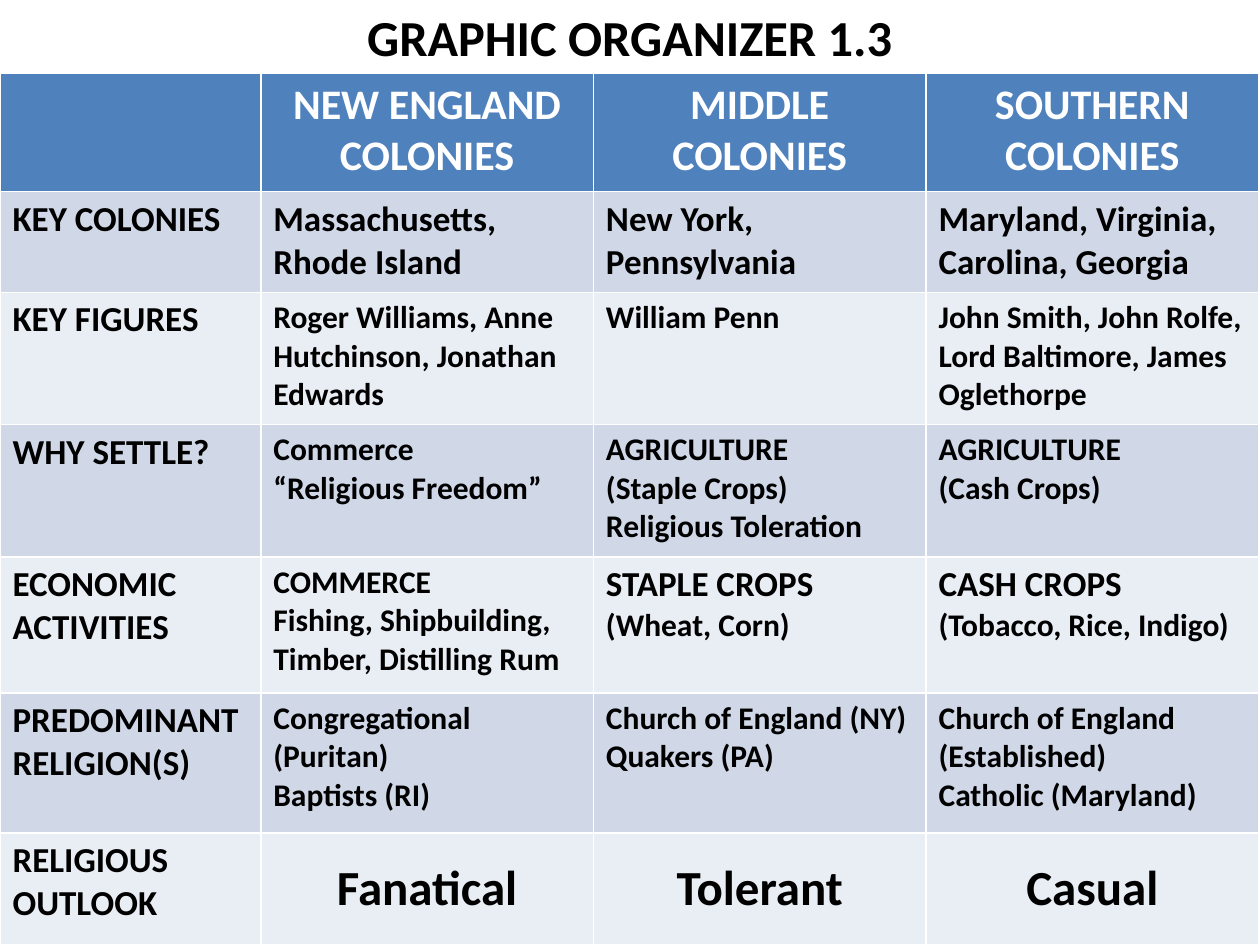
from pptx import Presentation
from pptx.dml.color import RGBColor
from pptx.enum.text import MSO_ANCHOR as Anchor, PP_ALIGN as Align
from pptx.util import Inches, Pt

FONT = "Calibri"
COLORS = {"header": "4F81BD", "odd": "D0D8E8", "even": "E9EDF4", "light": "FFFFFF", "dark": "000000"}
TITLE = "GRAPHIC ORGANIZER 1.3"
COLUMN_WIDTHS = [2.07, 2.64, 2.64, 2.64]
LABEL_SIZE = 20
LARGE_LINES = {"STAPLE CROPS", "CASH CROPS"}
ROWS = [
    (0.94, 24, ["", "NEW ENGLAND COLONIES", "MIDDLE COLONIES", "SOUTHERN COLONIES"]),
    (0.80, 20, ["KEY COLONIES", "Massachusetts, Rhode Island", "New York, Pennsylvania",
                "Maryland, Virginia, Carolina, Georgia"]),
    (1.05, 18, ["KEY FIGURES", "Roger Williams, Anne Hutchinson, Jonathan Edwards", "William Penn",
                "John Smith, John Rolfe, Lord Baltimore, James Oglethorpe"]),
    (1.05, 18, ["WHY SETTLE?", "Commerce\n“Religious Freedom”",
                "AGRICULTURE\n(Staple Crops)\nReligious Toleration", "AGRICULTURE\n(Cash Crops)"]),
    (1.08, 18, ["ECONOMIC ACTIVITIES", "COMMERCE\nFishing, Shipbuilding, Timber, Distilling Rum",
                "STAPLE CROPS\n(Wheat, Corn)", "CASH CROPS\n(Tobacco, Rice, Indigo)"]),
    (1.11, 18, ["PREDOMINANT RELIGION(S)", "Congregational (Puritan)\nBaptists (RI)",
                "Church of England (NY)\nQuakers (PA)",
                "Church of England (Established)\nCatholic (Maryland)"]),
    (0.89, 28, ["RELIGIOUS OUTLOOK", "Fanatical", "Tolerant", "Casual"]),
]


def style_para(para, size, color, align):
    para.alignment = align
    for span in para.runs:
        span.font.name = FONT
        span.font.size = Pt(size)
        span.font.bold = True
        span.font.color.rgb = RGBColor.from_string(COLORS[color])


def add_title(page):
    title = page.shapes.title
    title.left, title.top, title.width, title.height = Inches(0.5), Inches(0), Inches(9), Inches(0.58)
    title.text_frame.text = TITLE
    title.text_frame.vertical_anchor = Anchor.MIDDLE
    style_para(title.text_frame.paragraphs[0], 28.8, "dark", Align.CENTER)


def fill_cell(cell, text, size, row, column):
    is_header, is_label = row == 0, column == 0
    is_outlook = row == len(ROWS) - 1 and not is_label
    band = "header" if is_header else "odd" if row % 2 else "even"
    cell.fill.solid()
    cell.fill.fore_color.rgb = RGBColor.from_string(COLORS[band])
    cell.vertical_anchor = Anchor.MIDDLE if is_outlook else Anchor.TOP
    cell.text_frame.text = text
    for para in cell.text_frame.paragraphs:
        large = is_label or para.text in LARGE_LINES
        style_para(para, LABEL_SIZE if large else size, "light" if is_header else "dark",
                   Align.CENTER if is_header or is_outlook else Align.LEFT)


def add_organizer(page):
    height = sum(row[0] for row in ROWS)
    table = page.shapes.add_table(len(ROWS), len(COLUMN_WIDTHS), Inches(0), Inches(0.58),
                                  Inches(10), Inches(height)).table
    for column, width in zip(table.columns, COLUMN_WIDTHS):
        column.width = Inches(width)
    for r, (row_height, size, texts) in enumerate(ROWS):
        table.rows[r].height = Inches(row_height)
        for c, text in enumerate(texts):
            fill_cell(table.cell(r, c), text, size, r, c)


def main():
    deck = Presentation()
    deck.slide_width, deck.slide_height = Inches(10), Inches(7.5)
    page = deck.slides.add_slide(deck.slide_layouts[5])
    add_title(page)
    add_organizer(page)
    deck.save("out.pptx")


if __name__ == "__main__":
    main()
